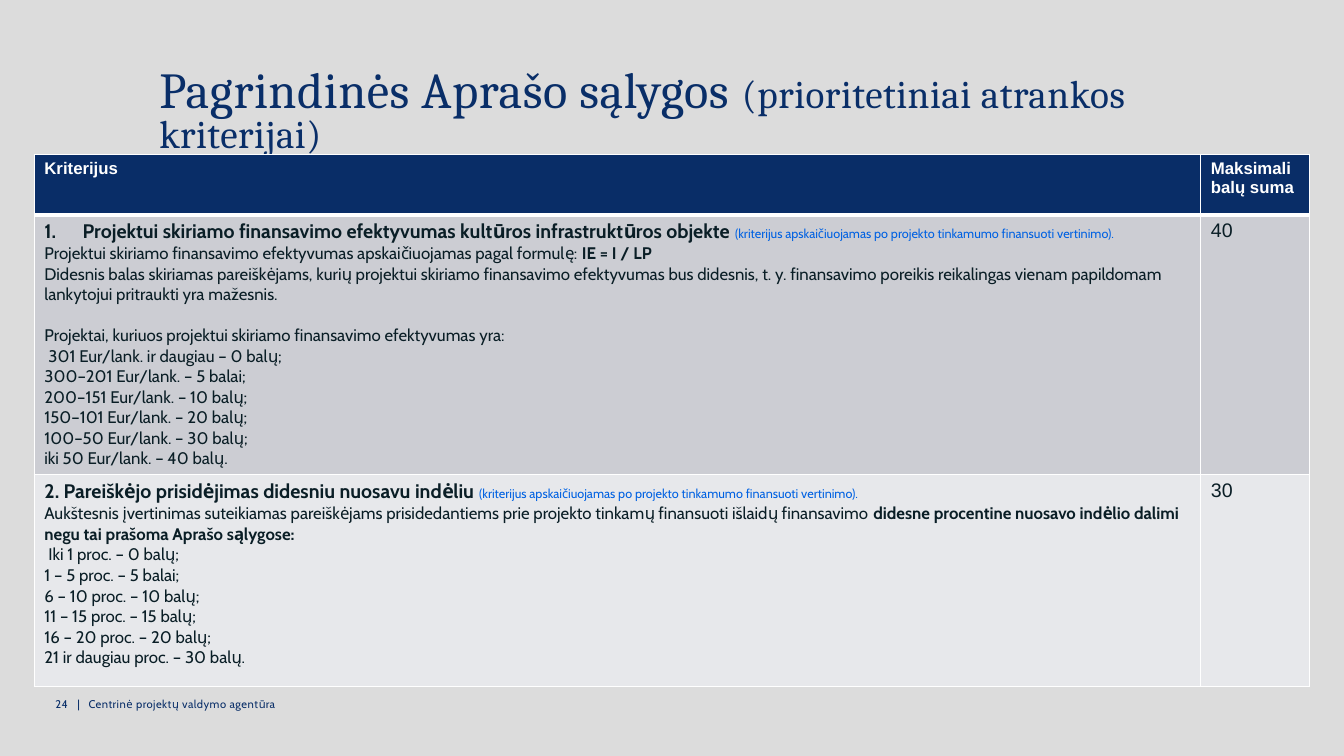
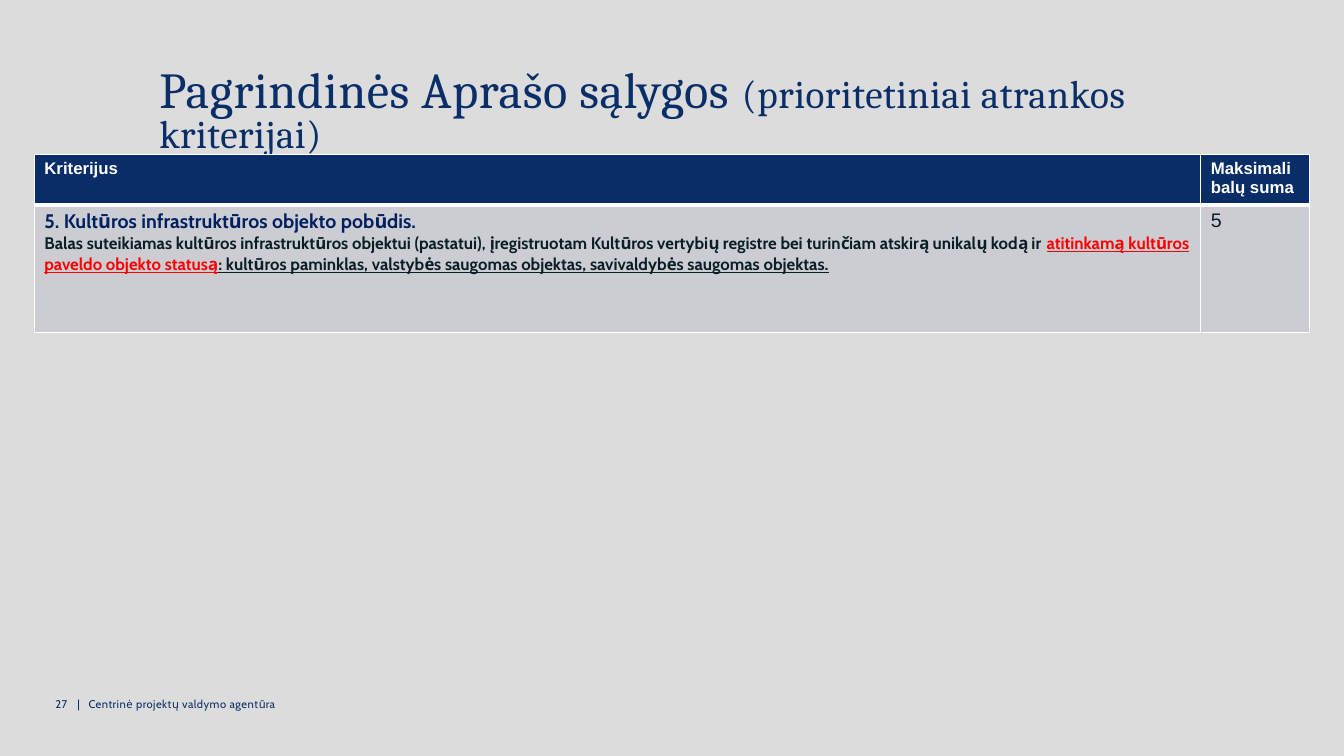
import pptx
import pptx.dml.color
import pptx.enum.text
import pptx.oxml
import pptx.oxml.ns
import pptx.util
from pptx.util import Inches

COLORS = {
    "background": "DCDCDC", "navy": "092E68", "header": "092D67", "heading": "002060",
    "ink": "0A1E26", "note": "0061E2", "alert": "FF0000", "white": "FFFFFF",
    "band_dark": "CCCDD3", "band_light": "E7E8EB",
}

STYLES = {
    "title": (36, "Cambria", "navy", False, False, 0.4),
    "subtitle": (28, "Cambria", "navy", False, False, 0.4),
    "footer": (8, "Cabin", "navy", False, False, 0.3),
    "header": (12, "Arial", "white", True, False, 0),
    "criterion": (14, "Cabin", "ink", True, False, 0),
    "criterion_navy": (14, "Cabin", "heading", True, False, 0),
    "note": (9, "Cabin", "note", False, False, 0),
    "body": (12, "Cabin", "ink", False, False, 0),
    "strong": (12, "Cabin", "ink", True, False, 0),
    "strong_alert": (12, "Cabin", "alert", True, True, 0),
    "strong_underlined": (12, "Cabin", "ink", True, True, 0),
    "points": (14, "Arial", "ink", False, False, 0),
}

NOTE = ("(kriterijus apskaičiuojamas po projekto tinkamumo finansuoti vertinimo).", "note")

EFFICIENCY = [
    [("Projektui skiriamo finansavimo efektyvumas kultūros infrastruktūros objekte ", "criterion"), NOTE],
    [("Projektui skiriamo finansavimo efektyvumas apskaičiuojamas pagal formulę: ", "body"),
     ("IE = I / LP", "strong")],
    [("Didesnis balas skiriamas pareiškėjams, kurių projektui skiriamo finansavimo efektyvumas bus "
      "didesnis, t. y. finansavimo poreikis reikalingas vienam papildomam lankytojui pritraukti yra "
      "mažesnis.", "body")],
    [("Projektai, kuriuos projektui skiriamo finansavimo efektyvumas yra:", "body")],
    [("301 Eur/lank. ir daugiau – 0 balų;", "body")],
    [("300–201 Eur/lank. – 5 balai;", "body")],
    [("200–151 Eur/lank. – 10 balų;", "body")],
    [("150–101 Eur/lank. – 20 balų;", "body")],
    [("100–50 Eur/lank. – 30 balų;", "body")],
    [("iki 50 Eur/lank. – 40 balų.", "body")],
]

CONTRIBUTION = [
    [("2. Pareiškėjo prisidėjimas didesniu nuosavu indėliu ", "criterion"), NOTE],
    [("Aukštesnis įvertinimas suteikiamas pareiškėjams prisidedantiems prie projekto tinkamų "
      "finansuoti išlaidų finansavimo ", "body"),
     ("didesne procentine nuosavo indėlio dalimi negu tai prašoma Aprašo sąlygose:", "strong")],
    [("Iki 1 proc. – 0 balų;", "body")],
    [("1 – 5 proc. – 5 balai;", "body")],
    [("6 – 10 proc. – 10 balų;", "body")],
    [("11 – 15 proc. – 15 balų;", "body")],
    [("16 – 20 proc. – 20 balų;", "body")],
    [("21 ir daugiau proc. – 30 balų.", "body")],
]

HERITAGE = [
    [("5. Kultūros infrastruktūros objekto pobūdis.", "criterion_navy")],
    [("Balas suteikiamas kultūros infrastruktūros objektui (pastatui), įregistruotam Kultūros "
      "vertybių registre bei turinčiam atskirą unikalų kodą ir ", "strong"),
     ("atitinkamą kultūros paveldo objekto statusą", "strong_alert"),
     (": kultūros paminklas, valstybės saugomas objektas, savivaldybės saugomas objektas.",
      "strong_underlined")],
]

HEADER = ([[("Kriterijus", "header")]], [[("Maksimali balų suma", "header")]])

PAGES = [
    {"number": 24, "heights": [0.6, 2.58, 2.1],
     "rows": [HEADER, (EFFICIENCY, [[("40", "points")]]), (CONTRIBUTION, [[("30", "points")]])]},
    {"number": 27, "heights": [0.46, 1.27],
     "rows": [HEADER, (HERITAGE, [[("5", "points")]])]},
]

ROW_FILLS = ["header", "band_dark", "band_light"]
NUMBERED = EFFICIENCY[0]
SPACED = EFFICIENCY[3]
INDENTED = [EFFICIENCY[4], CONTRIBUTION[2]]


def add_spans(para, spans):
    for text, style in spans:
        size, face, color, bold, underline, spacing = STYLES[style]
        span = para.add_run()
        span.text = text
        span.font.size = pptx.util.Pt(size)
        span.font.name = face
        span.font.bold = bold
        span.font.underline = underline
        span.font.color.rgb = pptx.dml.color.RGBColor.from_string(COLORS[color])
        if spacing:
            span.font._element.set("spc", str(round(spacing * 100)))


def add_element(parent, xml):
    tag, rest = xml.split(" ", 1)
    namespace = pptx.oxml.ns.nsdecls("a")
    parent.append(pptx.oxml.parse_xml(f"<a:{tag} {namespace} {rest}"))


deck = pptx.Presentation()
deck.slide_width = Inches(13.33)
deck.slide_height = Inches(7.5)
backdrop = deck.slide_master.background.fill
backdrop.solid()
backdrop.fore_color.rgb = pptx.dml.color.RGBColor.from_string(COLORS["background"])

for content in PAGES:
    page = deck.slides.add_slide(deck.slide_layouts[5])

    title = page.shapes.title
    title.left, title.top = Inches(1.48), Inches(0.64)
    title.width, title.height = Inches(11.31), Inches(1.19)
    title.text_frame.auto_size = pptx.enum.text.MSO_AUTO_SIZE.NONE
    title.text_frame.vertical_anchor = pptx.enum.text.MSO_ANCHOR.TOP
    para = title.text_frame.paragraphs[0]
    para.alignment = pptx.enum.text.PP_ALIGN.LEFT
    para.line_spacing = 0.8
    add_spans(para, [("Pagrindinės Aprašo sąlygos ", "title"),
                     ("(prioritetiniai atrankos kriterijai)", "subtitle")])

    footer = page.shapes.add_textbox(Inches(0.45), Inches(6.87), Inches(3.2), Inches(0.4))
    footer.text_frame.word_wrap = True
    para = footer.text_frame.paragraphs[0]
    stops = "".join(f'<a:tab pos="{Inches(stop)}" algn="l"/>' for stop in (0.22, 0.33))
    add_element(para._p.get_or_add_pPr(), f"tabLst >{stops}</a:tabLst>")
    add_spans(para, [(f"{content['number']}\t|\tCentrinė projektų valdymo agentūra", "footer")])

    heights = content["heights"]
    table = page.shapes.add_table(len(heights), 2, Inches(0.34), Inches(1.53),
                                  Inches(12.65), Inches(sum(heights))).table
    table.horz_banding = False
    for column, width in zip(table.columns, (11.57, 1.08)):
        column.width = Inches(width)

    for row_index, row in enumerate(content["rows"]):
        table.rows[row_index].height = Inches(heights[row_index])
        for column_index, paragraphs in enumerate(row):
            cell = table.cell(row_index, column_index)
            thick_side = {0: "B", 1: "T"}.get(row_index)
            for side in "LRTB":
                weight = pptx.util.Pt(3 if side == thick_side else 1)
                add_element(cell._tc.get_or_add_tcPr(),
                            f'ln{side} w="{weight}"><a:solidFill><a:srgbClr val="{COLORS["white"]}"/>'
                            f"</a:solidFill></a:ln{side}>")
            cell.fill.solid()
            cell.fill.fore_color.rgb = pptx.dml.color.RGBColor.from_string(
                COLORS[ROW_FILLS[row_index]])

            for index, spans in enumerate(paragraphs):
                frame = cell.text_frame
                para = frame.add_paragraph() if index else frame.paragraphs[0]
                properties = para._p.get_or_add_pPr()
                if spans is NUMBERED:
                    properties.set("marL", str(Inches(0.38)))
                    properties.set("indent", str(-Inches(0.38)))
                    add_element(properties, 'buAutoNum type="arabicPeriod"/>')
                if spans in INDENTED:
                    properties.set("marL", str(Inches(0.04)))
                if spans is SPACED:
                    para.space_before = pptx.util.Pt(14.5)
                add_spans(para, spans)

deck.save("out.pptx")
